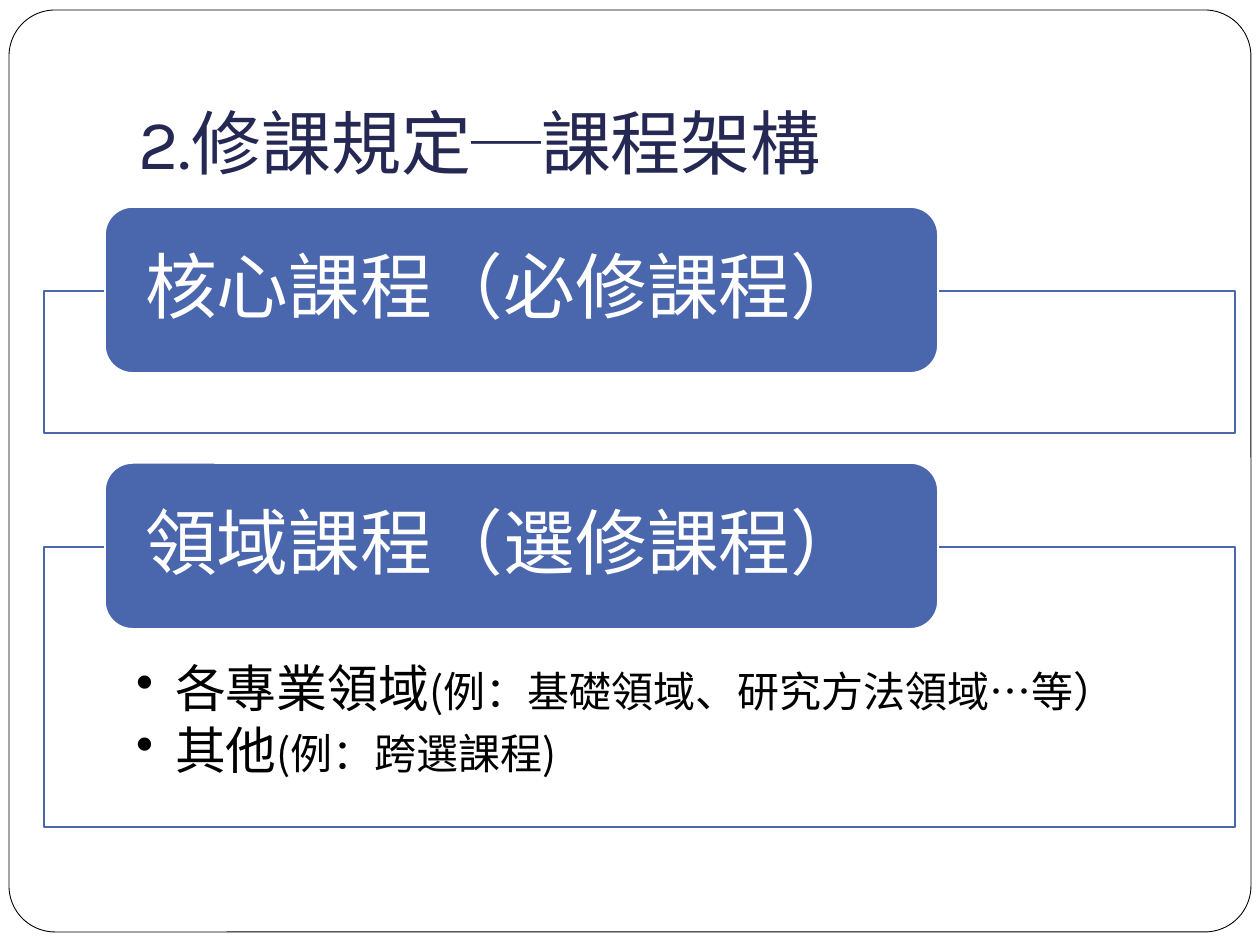
import pptx
import pptx.util
import pptx.dml.color
import pptx.enum.shapes
import pptx.enum.text
import lxml.etree

Pt = pptx.util.Pt
RGB = pptx.dml.color.RGBColor
KIND = pptx.enum.shapes.MSO_SHAPE
ANCHOR = pptx.enum.text.MSO_ANCHOR
ALIGN = pptx.enum.text.PP_ALIGN

PX = 914400 / 126
WHITE = RGB(0xFF, 0xFF, 0xFF)
BLACK = RGB(0, 0, 0)
BLUE = RGB(0x4A, 0x66, 0xAC)
NAVY = RGB(0x24, 0x28, 0x52)


def px(*nums):
    return [round(n * PX) for n in nums]


def add_box(kind, area, fill, line, width):
    box = slide.shapes.add_shape(kind, *px(*area))
    box.shadow.inherit = False
    box.fill.solid()
    box.fill.fore_color.rgb = fill
    box.line.color.rgb = line
    box.line.width = Pt(width)
    return box


deck = pptx.Presentation()
deck.slide_width, deck.slide_height = px(1260, 945)
slide = deck.slides.add_slide(deck.slide_layouts[6])

frame = add_box(KIND.ROUNDED_RECTANGLE, (9, 10, 1242, 922), WHITE, BLACK, 0.5)
frame.adjustments[0] = 0.05

title = slide.shapes.add_textbox(*px(126, 38, 1071, 158)).text_frame
title.word_wrap = True
title.vertical_anchor = ANCHOR.BOTTOM
title.margin_bottom = px(13)[0]
para = title.paragraphs[0]
para.text = "2.修課規定─課程架構"
para.font.size = Pt(40)
para.font.name = "Karla"
para.font.color.rgb = NAVY

# Each section: heading, panel top, panel height, list items
sections = [
    ("核心課程（必修課程）", 291, 142, []),
    ("領域課程（選修課程）", 547, 280, [
        ("各專業領域", "(例：基礎領域、研究方法領域…等）"),
        ("其他", "(例：跨選課程)"),
    ]),
]

for head, top, high, items in sections:
    panel = add_box(KIND.RECTANGLE, (44, top, 1191, high), WHITE, BLUE, 1)
    body = panel.text_frame
    body.word_wrap = True
    body.vertical_anchor = ANCHOR.TOP
    body.margin_left = body.margin_right = px(92)[0]
    body.margin_top, body.margin_bottom = px(117, 29)
    for i, item in enumerate(items):
        para = body.add_paragraph() if i else body.paragraphs[0]
        para.alignment = ALIGN.LEFT
        para.line_spacing = 0.9
        para.space_after = Pt(4)
        para.font.name = "Noto Sans CJK SC"
        para.font.color.rgb = BLACK
        for words, size in zip(item, (29, 24)):
            run = para.add_run()
            run.text = words
            run.font.size = Pt(size)
        props = para._p.get_or_add_pPr()
        hang = px(39)[0]
        props.set("marL", str(hang))
        props.set("indent", str(-hang))
        mark = lxml.etree.Element(pptx.oxml.ns.qn("a:buChar"), char="•")
        props.find(pptx.oxml.ns.qn("a:defRPr")).addprevious(mark)

    tab = add_box(KIND.ROUNDED_RECTANGLE, (105, top - 84, 833, 166), BLUE, WHITE, 1)
    label = tab.text_frame
    label.word_wrap = True
    label.vertical_anchor = ANCHOR.MIDDLE
    label.margin_left = label.margin_right = px(32)[0]
    label.margin_top = label.margin_bottom = 0
    para = label.paragraphs[0]
    para.text = head
    para.alignment = ALIGN.LEFT
    para.line_spacing = 0.9
    para.font.size = Pt(41)
    para.font.name = "Arial"
    para.font.color.rgb = WHITE

deck.save("out.pptx")
